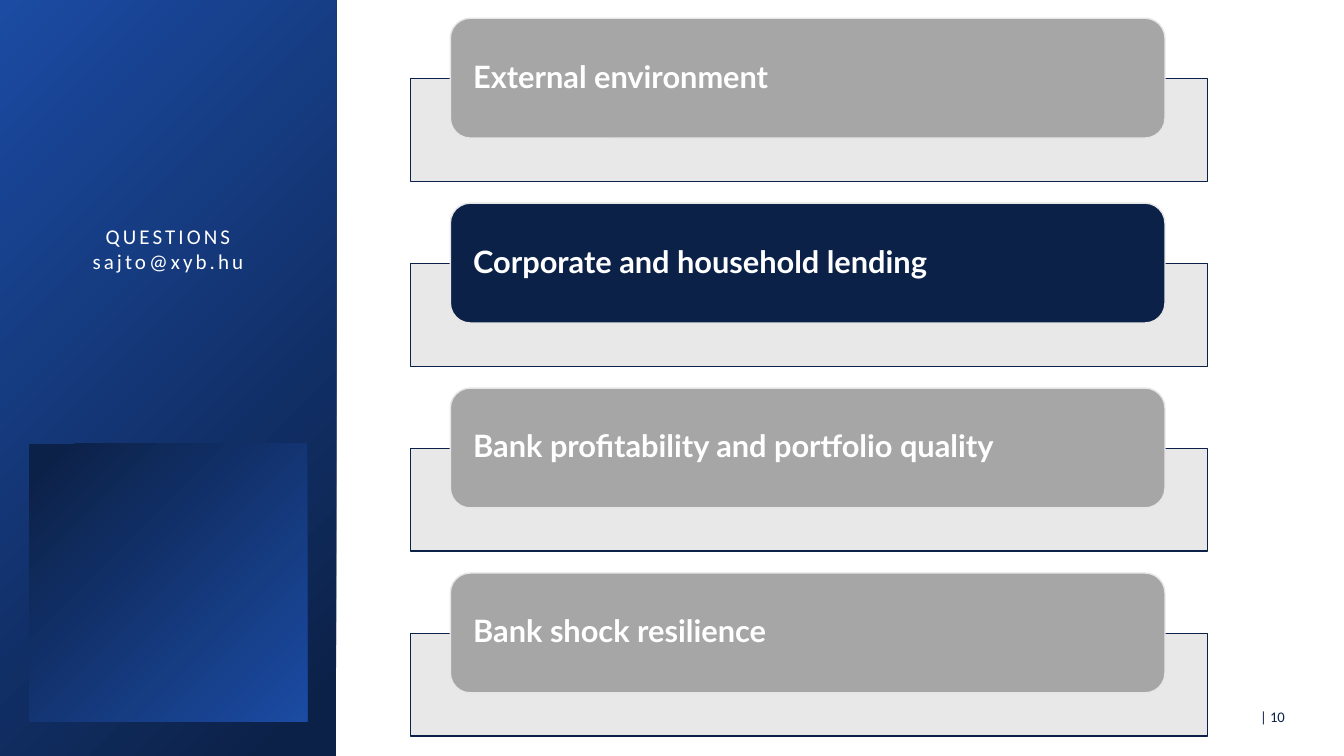
"""Build the agenda slide with its contact sidebar and four topic cards."""
from dataclasses import dataclass

import lxml.etree
import pptx
import pptx.dml.color
import pptx.enum.shapes
import pptx.enum.text
import pptx.oxml.ns
import pptx.util

Cm = pptx.util.Cm
Pt = pptx.util.Pt
SHAPE = pptx.enum.shapes.MSO_SHAPE
ALIGN = pptx.enum.text.PP_ALIGN
ANCHOR = pptx.enum.text.MSO_ANCHOR


@dataclass(frozen=True)
class Theme:
    navy: str = "0C2148"
    blue: str = "1B4BA3"
    grey: str = "A6A6A6"
    pale: str = "E7E6E6"
    white: str = "FFFFFF"
    sans: str = "Calibri"
    heading: str = "Lato"
    card_size: float = 22
    contact_size: float = 15
    number_size: float = 10.5


THEME = Theme()
TOPICS = [
    "External environment",
    "Corporate and household lending",
    "Bank profitability and portfolio quality",
    "Bank shock resilience",
]
CURRENT_TOPIC = 1
CONTACT = ["QUESTIONS", "sajto@xyb.hu"]
TOPIC_PITCH = 4.66


def rgb(color):
    return pptx.dml.color.RGBColor.from_string(color)


def add_box(s, kind, left, top, width, height):
    sp = s.shapes.add_shape(kind, Cm(left), Cm(top), Cm(width), Cm(height))
    sp.shadow.inherit = False
    return sp


def add_gradient_panel(s, left, top, width, height, rotation=0):
    sp = add_box(s, SHAPE.RECTANGLE, left, top, width, height)
    sp.rotation = rotation
    sp.line.fill.background()
    sp.fill.gradient()
    sp.fill.gradient_angle = 135
    stops = zip(sp.fill.gradient_stops, (0.06, 1), (THEME.navy, THEME.blue))
    for stop, position, color in stops:
        stop.position = position
        stop.color.rgb = rgb(color)


def add_filled_box(s, kind, bounds, fill, line):
    sp = add_box(s, kind, *bounds)
    sp.fill.solid()
    sp.fill.fore_color.rgb = rgb(fill)
    sp.line.color.rgb = rgb(line)
    sp.line.width = Pt(1)
    return sp


def set_opacity(sp, percent):
    qn = pptx.oxml.ns.qn
    color = sp.element.spPr.find(".//" + qn("a:srgbClr"))
    lxml.etree.SubElement(color, qn("a:alpha"), val=str(percent * 1000))


def format_paragraph(p, name, size, color, align, bold=False, spacing=1.0):
    p.alignment = align
    p.line_spacing = spacing
    p.font.name = name
    p.font.size = Pt(size)
    p.font.bold = bold
    p.font.color.rgb = rgb(color)


def add_topic(s, text, top, fill):
    backing = add_filled_box(s, SHAPE.RECTANGLE, (10.34, top + 1.52, 20.09, 2.59),
                             THEME.pale, THEME.navy)
    set_opacity(backing, 90)
    card = add_filled_box(s, SHAPE.ROUNDED_RECTANGLE, (11.35, top, 18.01, 3.02),
                          fill, THEME.pale)
    tf = card.text_frame
    tf.word_wrap = True
    tf.vertical_anchor = ANCHOR.MIDDLE
    tf.margin_left = tf.margin_right = Cm(0.43)
    tf.margin_top = tf.margin_bottom = 0
    tf.text = text
    format_paragraph(tf.paragraphs[0], THEME.heading, THEME.card_size,
                     THEME.white, ALIGN.LEFT, bold=True, spacing=0.9)


def place_contact_title(s):
    title = s.shapes.title
    title.left, title.top = Cm(1.02), Cm(5.51)
    title.width, title.height = Cm(6.43), Cm(1.55)
    s.shapes.element.append(title.element)
    tf = title.text_frame
    tf.word_wrap = True
    tf.auto_size = pptx.enum.text.MSO_AUTO_SIZE.NONE
    tf.vertical_anchor = ANCHOR.TOP
    tf.text = "\n".join(CONTACT)
    for p in tf.paragraphs:
        format_paragraph(p, THEME.sans, THEME.contact_size, THEME.white, ALIGN.CENTER)
        for r in p.runs:
            r.font._element.set("spc", "220")


def add_page_number(s, number):
    box = s.shapes.add_textbox(Cm(30.96), Cm(17.53), Cm(1.75), Cm(1.04))
    tf = box.text_frame
    tf.word_wrap = True
    tf.vertical_anchor = ANCHOR.MIDDLE
    tf.margin_right = Cm(0.33)
    tf.text = f"| {number}"
    format_paragraph(tf.paragraphs[0], THEME.sans, THEME.number_size,
                     THEME.navy, ALIGN.RIGHT)


def main():
    prs = pptx.Presentation()
    prs.slide_width, prs.slide_height = Cm(33.87), Cm(19.05)
    s = prs.slides.add_slide(prs.slide_layouts[5])
    add_gradient_panel(s, 0, 0, 8.47, 19.05)
    add_gradient_panel(s, 0.73, 11.18, 7.01, 7.01, rotation=180)
    place_contact_title(s)
    add_page_number(s, 10)
    for i, topic in enumerate(TOPICS):
        fill = THEME.navy if i == CURRENT_TOPIC else THEME.grey
        add_topic(s, topic, 0.46 + i * TOPIC_PITCH, fill)
    prs.save("out.pptx")


if __name__ == "__main__":
    main()
